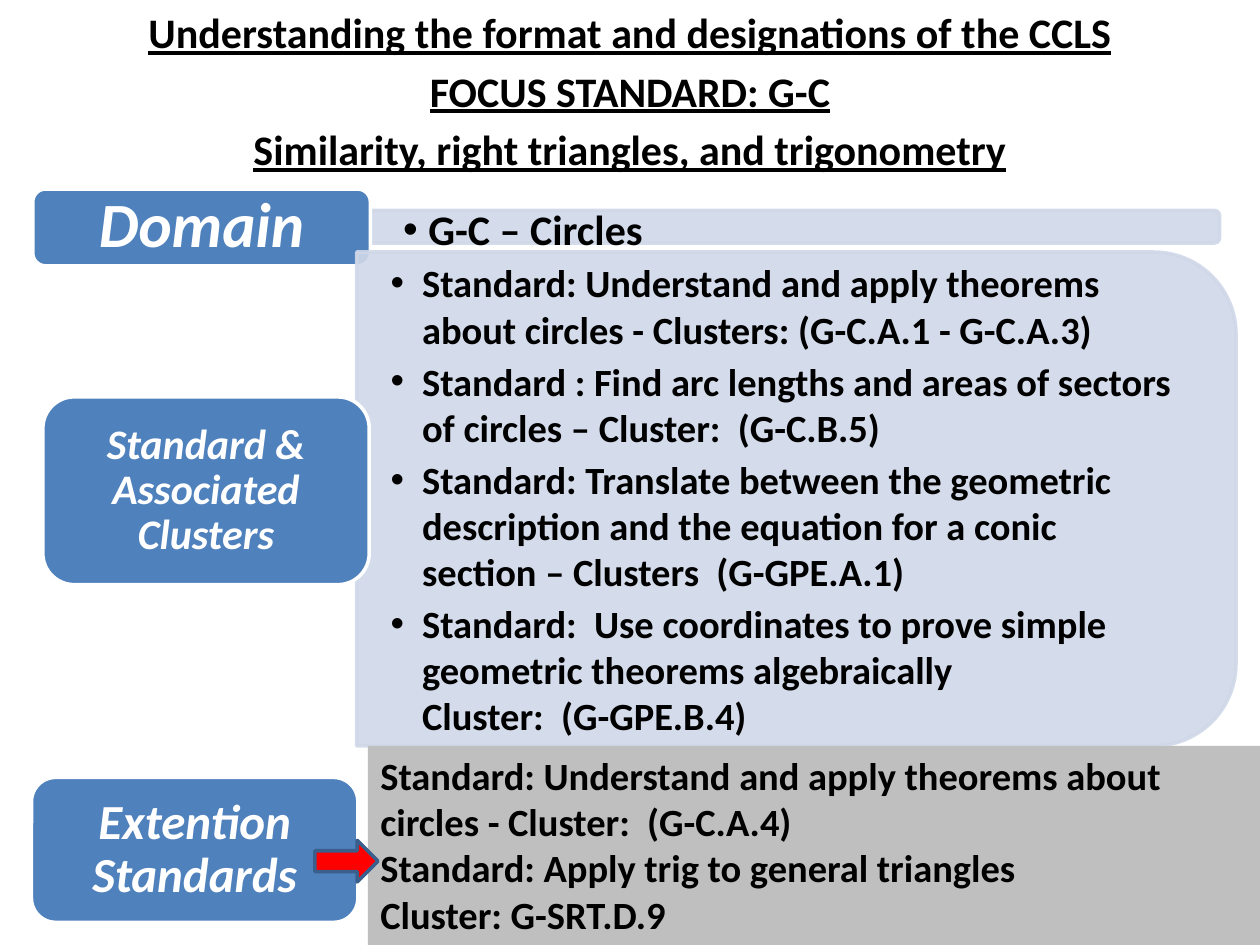
from dataclasses import dataclass

from lxml.etree import SubElement
from pptx import Presentation
from pptx.dml.color import RGBColor
from pptx.enum.shapes import MSO_SHAPE as Preset
from pptx.enum.text import MSO_ANCHOR as Anchor, MSO_AUTO_SIZE as AutoSize, PP_ALIGN as Align
from pptx.oxml.ns import qn
from pptx.util import Inches, Pt


@dataclass(frozen=True)
class Theme:
    """Colours, font and type sizes of the slide."""
    font: str = "Calibri"
    ink: str = "000000"
    white: str = "FFFFFF"
    label: str = "4F81BD"
    panel: str = "D0D8E8"
    extension: str = "BFBFBF"
    arrow: str = "FF0000"
    arrow_edge: str = "3A5F8C"
    heading_size: int = 24
    list_size: int = 22
    edge: int = 2


THEME = Theme()

HEADING = [
    "Understanding the format and designations of the CCLS",
    "FOCUS STANDARD: G-C",
    "Similarity, right triangles, and trigonometry",
]
CLUSTERS = [
    "Standard: Understand and apply theorems about circles - Clusters: (G-C.A.1 - G-C.A.3)",
    "Standard : Find arc lengths and areas of sectors of circles – Cluster:  (G-C.B.5)",
    "Standard: Translate between the geometric description and the equation for a conic "
    "section – Clusters  (G-GPE.A.1)",
    "Standard:  Use coordinates to prove simple geometric theorems algebraically\v"
    "Cluster:  (G-GPE.B.4)",
]
EXTENSIONS = [
    "Standard: Understand and apply theorems about circles - Cluster:  (G-C.A.4)",
    "Standard: Apply trig to general triangles",
    "Cluster: G-SRT.D.9",
]
LABELS = [
    ("Domain", 36, (0.26, 1.5, 2.68, 0.61)),
    ("Standard & Associated Clusters", 24, (0.34, 3.15, 2.59, 1.49)),
    ("Extention Standards", 28, (0.25, 6.17, 2.59, 1.15)),
]


def place(item, box):
    """Move and size a shape to a box given in inches."""
    item.left, item.top, item.width, item.height = map(Inches, box)


def add_bullet(paragraph, hang):
    """Give a paragraph a round bullet with a hanging indent."""
    properties = paragraph._p.get_or_add_pPr()
    properties.set("marL", str(Inches(hang)))
    properties.set("indent", str(-Inches(hang)))
    SubElement(properties, qn("a:buFont")).set("typeface", "Arial")
    SubElement(properties, qn("a:buChar")).set("char", "•")


def write(item, lines, size, color=THEME.ink, align=Align.LEFT, anchor=Anchor.MIDDLE,
          inset=(0.1, 0.05), hang=0, before=0, after=0, leading=1, italic=None, underline=None):
    """Fill a shape with bold paragraphs of one style."""
    frame = item.text_frame
    frame.word_wrap = True
    frame.auto_size = AutoSize.NONE
    frame.vertical_anchor = anchor
    frame.margin_left = frame.margin_right = Inches(inset[0])
    frame.margin_top = frame.margin_bottom = Inches(inset[1])
    for index, line in enumerate(lines):
        paragraph = frame.add_paragraph() if index else frame.paragraphs[0]
        paragraph.text = line
        paragraph.alignment = align
        paragraph.line_spacing = leading
        paragraph.space_before = Pt(before if index else 0)
        paragraph.space_after = Pt(after)
        if hang:
            add_bullet(paragraph, hang)
        font = paragraph.font
        font.name, font.size, font.bold = THEME.font, Pt(size), True
        font.italic, font.underline = italic, underline
        font.color.rgb = RGBColor.from_string(color)


def add_block(slide, preset, box, fill, edge=None):
    """Add a flat filled shape, outlined when an edge colour is given."""
    block = slide.shapes.add_shape(preset, *map(Inches, box))
    block.shadow.inherit = False
    block.fill.solid()
    block.fill.fore_color.rgb = RGBColor.from_string(fill)
    if edge:
        block.line.color.rgb = RGBColor.from_string(edge)
        block.line.width = Pt(THEME.edge)
    else:
        block.line.fill.background()
    return block


def add_panel(slide, box):
    """Add a translucent panel whose right corners are rounded by a quarter turn."""
    left, top, width, height = box
    shift = (width - height) / 2
    turned = (left + shift, top - shift, height, width)
    panel = add_block(slide, Preset.ROUND_2_SAME_RECTANGLE, turned, THEME.panel, THEME.panel)
    panel.rotation = 90
    for color in panel._element.spPr.iter(qn("a:srgbClr")):
        SubElement(color, qn("a:alpha")).set("val", "90000")


def add_label(slide, caption, size, box):
    """Add a rounded blue label with an italic caption."""
    label = add_block(slide, Preset.ROUNDED_RECTANGLE, box, THEME.label, THEME.white)
    write(label, [caption], size, THEME.white, Align.CENTER, leading=0.9, italic=True)


def main():
    """Build and save the slide."""
    deck = Presentation()
    deck.slide_width, deck.slide_height = Inches(10), Inches(7.5)
    slide = deck.slides.add_slide(deck.slide_layouts[1])
    heading, clusters = slide.placeholders

    place(heading, (0, 0, 10, 1.45))
    write(heading, HEADING, THEME.heading_size, align=Align.CENTER, anchor=Anchor.TOP,
          before=4.8, underline=True)

    add_panel(slide, (2.93, 1.67, 6.75, 0.26))
    domain = slide.shapes.add_textbox(*map(Inches, (2.93, 1.72, 6.74, 0.24)))
    write(domain, ["G-C – Circles"], THEME.heading_size, inset=(0.27, 0), hang=0.2, leading=0.9)
    add_label(slide, *LABELS[0])

    add_panel(slide, (2.83, 2, 6.98, 3.92))
    place(clusters, (2.83, 2.19, 6.79, 3.54))
    write(clusters, CLUSTERS, THEME.list_size, inset=(0.27, 0), hang=0.25, after=3.3)
    slide.shapes._spTree.append(clusters._element)
    for label in LABELS[1:]:
        add_label(slide, *label)

    extension = add_block(slide, Preset.RECTANGLE, (2.92, 5.92, 7.08, 1.58), THEME.extension)
    write(extension, EXTENSIONS, THEME.list_size, anchor=Anchor.TOP)
    add_block(slide, Preset.RIGHT_ARROW, (2.5, 6.67, 0.5, 0.33), THEME.arrow, THEME.arrow_edge)

    deck.save("out.pptx")


if __name__ == "__main__":
    main()
